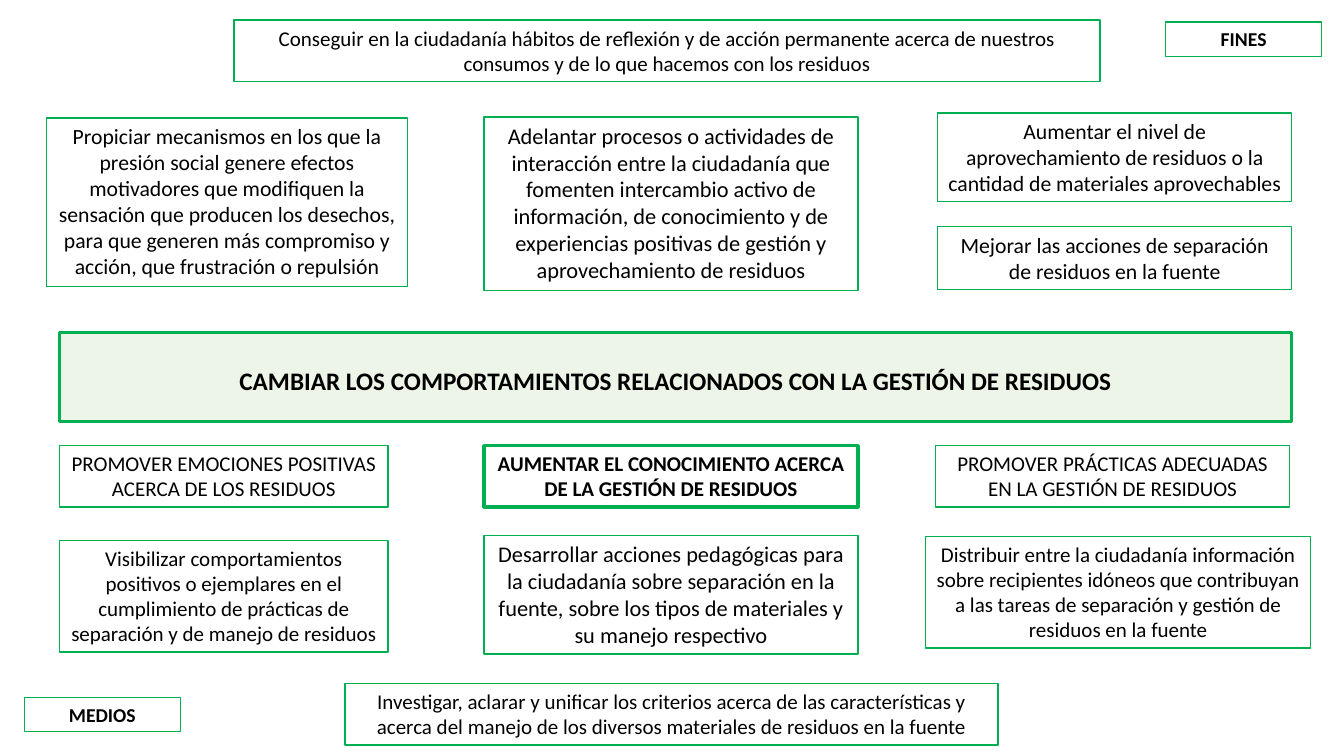
import pptx
import pptx.util
import pptx.dml.color
import pptx.enum.text

Inches, Pt = pptx.util.Inches, pptx.util.Pt
ANCHOR = pptx.enum.text.MSO_ANCHOR
FIT = pptx.enum.text.MSO_AUTO_SIZE
GREEN, PALE, WHITE, BLACK = "00B050", "ECF5E7", "FFFFFF", "000000"


def color(value):
    return pptx.dml.color.RGBColor.from_string(value)


def write_box(sp, text, at, size=15, bold=False, weight=1, fill=None,
              anchor=ANCHOR.TOP, fit=FIT.SHAPE_TO_FIT_TEXT, spacing=1.0):
    """Place a green-outlined box and write one centred paragraph in it."""
    sp.left, sp.top, sp.width, sp.height = (Inches(v) for v in at)
    if fill:
        sp.fill.solid()
        sp.fill.fore_color.rgb = color(fill)
    sp.line.color.rgb = color(GREEN)
    sp.line.width = Pt(weight)
    tf = sp.text_frame
    tf.word_wrap = True
    tf.auto_size = fit
    tf.vertical_anchor = anchor
    p = tf.paragraphs[0]
    p.alignment = pptx.enum.text.PP_ALIGN.CENTER
    p.line_spacing = spacing
    r = p.add_run()
    r.text = text
    r.font.name = "Calibri"
    r.font.size = Pt(size)
    r.font.bold = bold
    r.font.color.rgb = color(BLACK)


prs = pptx.Presentation()
prs.slide_width, prs.slide_height = Inches(13.33), Inches(7.5)
s = prs.slides.add_slide(prs.slide_layouts[5])

# Central objective
write_box(s.shapes.title, "CAMBIAR LOS COMPORTAMIENTOS RELACIONADOS CON LA GESTIÓN DE RESIDUOS",
          (0.59, 3.3, 12.22, 0.88), size=18, bold=True, weight=2.25, fill=PALE,
          anchor=ANCHOR.MIDDLE, fit=FIT.NONE, spacing=1.2)

# Columns: left edge and width
LEFT, MIDDLE, RIGHT = (0.59, 3.26), (4.8, 3.71), (9.3, 3.51)
TAG_W, TAG_H = 1.55, 0.34
TWO_LINES = 0.61
MEANS_TOP = 4.42

# Each box: text, (left, width), top, height, format
boxes = [
    # Ends
    ("Conseguir en la ciudadanía hábitos de reflexión y de acción permanente acerca de nuestros "
     "consumos y de lo que hacemos con los residuos", (2.32, 8.59), 0.2, TWO_LINES, {}),
    ("FINES", (11.56, TAG_W), 0.22, TAG_H, dict(size=14, bold=True)),
    ("Propiciar mecanismos en los que la presión social genere efectos motivadores que modifiquen "
     "la sensación que producen los desechos, para que generen más compromiso y acción, que "
     "frustración o repulsión", (0.46, 3.58), 1.17, 1.67, dict(size=15.5)),
    ("Adelantar procesos o actividades de interacción entre la ciudadanía que fomenten intercambio "
     "activo de información, de conocimiento y de experiencias positivas de gestión y "
     "aprovechamiento de residuos", MIDDLE, 1.16, 1.72, dict(size=16)),
    ("Aumentar el nivel de aprovechamiento de residuos o la cantidad de materiales aprovechables",
     RIGHT, 1.12, 0.88, dict(size=15.5)),
    ("Mejorar las acciones de separación de residuos en la fuente",
     RIGHT, 2.25, 0.62, dict(size=15.5)),
    # Means
    ("PROMOVER EMOCIONES POSITIVAS ACERCA DE LOS RESIDUOS", LEFT, MEANS_TOP, TWO_LINES, {}),
    ("AUMENTAR EL CONOCIMIENTO ACERCA DE LA GESTIÓN DE RESIDUOS", MIDDLE, MEANS_TOP, TWO_LINES,
     dict(bold=True, weight=2.25, fill=WHITE)),
    ("PROMOVER PRÁCTICAS ADECUADAS EN LA GESTIÓN DE RESIDUOS",
     (9.28, 3.51), MEANS_TOP, TWO_LINES, {}),
    ("Visibilizar comportamientos positivos o ejemplares en el cumplimiento de prácticas de "
     "separación y de manejo de residuos", LEFT, 5.36, 1.11, {}),
    ("Desarrollar acciones pedagógicas para la ciudadanía sobre separación en la fuente, sobre los "
     "tipos de materiales y su manejo respectivo", MIDDLE, 5.31, 1.18, dict(size=16)),
    ("Distribuir entre la ciudadanía información sobre recipientes idóneos que contribuyan a las "
     "tareas de separación y gestión de residuos en la fuente", (9.18, 3.82), 5.32, 1.11, {}),
    ("MEDIOS", (0.24, TAG_W), 6.92, TAG_H, dict(size=14, bold=True)),
    ("Investigar, aclarar y unificar los criterios acerca de las características y acerca del "
     "manejo de los diversos materiales de residuos en la fuente",
     (3.42, 6.48), 6.78, TWO_LINES, {}),
]
for text, (left, width), top, height, style in boxes:
    write_box(s.shapes.add_textbox(0, 0, 0, 0), text, (left, top, width, height), **style)

prs.save("out.pptx")
